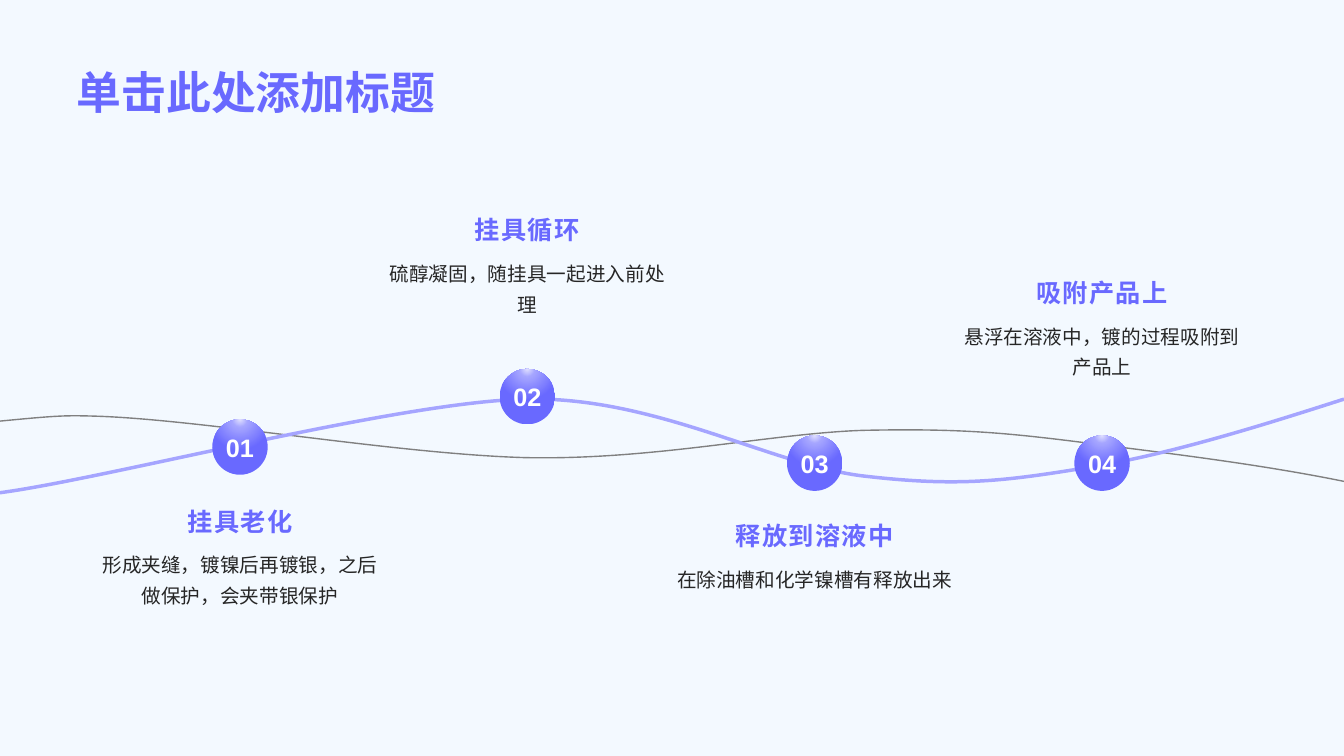
from dataclasses import dataclass

from lxml.etree import SubElement
from pptx import Presentation
from pptx.dml.color import RGBColor
from pptx.enum.shapes import MSO_SHAPE
from pptx.enum.text import MSO_ANCHOR, MSO_AUTO_SIZE, PP_ALIGN
from pptx.oxml.ns import qn
from pptx.slide import Slide
from pptx.util import Inches, Pt

COLORS = {
    "background": "F3F9FF",
    "accent": "6969FF",
    "accent_mid": "A5A5FF",
    "accent_light": "E1E1FF",
    "body": "262626",
    "thin_wave": "808080",
    "white": "FFFFFF",
}
FIRST_LEFT, STEP_PITCH = 0.97, 2.85
LABEL_WIDTH, HEADING_HEIGHT = 2.82, 0.42
BODY_OFFSET, BODY_HEIGHT = 0.46, 1.1
BADGE_SIZE = 0.55


@dataclass(frozen=True)
class Step:
    heading: str
    body: str
    heading_top: float
    badge_top: float


@dataclass(frozen=True)
class Wave:
    """Bezier curve: a start point, then three points for each segment."""
    points: tuple[tuple[float, float], ...]
    color: str
    weight: float


STEPS = (
    Step("挂具老化", "形成夹缝，镀镍后再镀银，之后做保护，会夹带银保护", 4.96, 4.16),
    Step("挂具循环", "硫醇凝固，随挂具一起进入前处理", 2.07, 3.66),
    Step("释放到溶液中", "在除油槽和化学镍槽有释放出来", 5.1, 4.32),
    Step("吸附产品上", "悬浮在溶液中，镀的过程吸附到产品上", 2.69, 4.32),
)
WAVES = (
    Wave(((-0.02, 4.18), (0.6, 4.12), (0.65, 4.12), (0.98, 4.13),
          (2.05, 4.17), (3.91, 4.5), (5.19, 4.54),
          (6.47, 4.57), (7.64, 4.3), (8.56, 4.27),
          (9.49, 4.25), (9.95, 4.29), (10.74, 4.39),
          (11.52, 4.49), (12.47, 4.6), (13.35, 4.78)), "thin_wave", 1),
    Wave(((-0.01, 4.89), (1.06, 4.75), (3.93, 3.99), (5.21, 3.96),
          (6.49, 3.93), (7.62, 4.6), (8.54, 4.72),
          (9.46, 4.83), (9.92, 4.78), (10.72, 4.65),
          (11.52, 4.53), (12.43, 4.25), (13.33, 3.96)), "accent_mid", 2.5),
)


def rgb(name: str) -> RGBColor:
    return RGBColor.from_string(COLORS[name])


def write_text(shape, text: str, *, size: float, color: str, bold: bool = False,
               align=PP_ALIGN.CENTER, anchor=MSO_ANCHOR.MIDDLE, wrap: bool = True,
               line_spacing: float = 1.0, tracking: float = 0) -> None:
    frame = shape.text_frame
    frame.margin_left = frame.margin_top = frame.margin_right = frame.margin_bottom = 0
    frame.auto_size = MSO_AUTO_SIZE.NONE
    frame.word_wrap = wrap
    frame.vertical_anchor = anchor
    paragraph = frame.paragraphs[0]
    paragraph.alignment = align
    paragraph.line_spacing = line_spacing
    run = paragraph.add_run()
    run.text = text
    run.font.name = "Arial"
    run.font.size = Pt(size)
    run.font.bold = bold
    run.font.color.rgb = rgb(color)
    if tracking:
        run.font._element.set("spc", str(round(tracking * 100)))


def draw_wave(slide: Slide, wave: Wave) -> None:
    points = [(Inches(x), Inches(y)) for x, y in wave.points]
    builder = slide.shapes.build_freeform(*points[0])
    builder.add_line_segments(points[1:], close=False)
    curve = builder.convert_to_shape()
    curve.shadow.inherit = False
    curve.fill.background()
    curve.line.color.rgb = rgb(wave.color)
    curve.line.width = Pt(wave.weight)
    # Join every three straight segments into one Bezier segment
    segments = list(curve._element.iter(qn("a:lnTo")))
    outline = segments[0].getparent()
    for start in range(0, len(segments), 3):
        bezier = SubElement(outline, qn("a:cubicBezTo"))
        for segment in segments[start:start + 3]:
            bezier.append(segment[0])
            outline.remove(segment)


def fill_glossy(shape) -> None:
    """Fill with a circular gradient lit from above."""
    shape.fill.gradient()
    gradient = shape._element.spPr.find(qn("a:gradFill"))
    for child in list(gradient):
        gradient.remove(child)
    stops = SubElement(gradient, qn("a:gsLst"))
    for percent, name in ((0, "accent_light"), (21, "accent_mid"), (80, "accent")):
        stop = SubElement(stops, qn("a:gs"), pos=str(percent * 1000))
        SubElement(stop, qn("a:srgbClr"), val=COLORS[name])
    circle = SubElement(gradient, qn("a:path"), {"path": "circle"})
    SubElement(circle, qn("a:fillToRect"), l="50000", t="-80000", r="50000", b="180000")


def draw_step(slide: Slide, index: int, step: Step) -> None:
    left = FIRST_LEFT + index * STEP_PITCH
    # Description
    body = slide.shapes.add_textbox(
        Inches(left), Inches(step.heading_top + BODY_OFFSET),
        Inches(LABEL_WIDTH), Inches(BODY_HEIGHT))
    write_text(body, step.body, size=14, color="body", anchor=MSO_ANCHOR.TOP,
               line_spacing=1.3)
    # Heading
    heading = slide.shapes.add_shape(
        MSO_SHAPE.ROUNDED_RECTANGLE, Inches(left), Inches(step.heading_top),
        Inches(LABEL_WIDTH), Inches(HEADING_HEIGHT))
    heading.adjustments[0] = 0.5
    heading.shadow.inherit = False
    heading.fill.background()
    heading.line.fill.background()
    write_text(heading, step.heading, size=18, color="accent", bold=True, tracking=1)
    # Numbered badge, centred on the label
    badge = slide.shapes.add_shape(
        MSO_SHAPE.OVAL, Inches(left + (LABEL_WIDTH - BADGE_SIZE) / 2),
        Inches(step.badge_top), Inches(BADGE_SIZE), Inches(BADGE_SIZE))
    badge.shadow.inherit = False
    badge.line.fill.background()
    fill_glossy(badge)
    write_text(badge, f"{index + 1:02}", size=18, color="white", bold=True, wrap=False)


def main() -> None:
    deck = Presentation()
    deck.slide_width, deck.slide_height = Inches(13.33), Inches(7.5)
    slide = deck.slides.add_slide(deck.slide_layouts[5])
    slide.background.fill.solid()
    slide.background.fill.fore_color.rgb = rgb("background")

    # Title
    title = slide.shapes.title
    title.left, title.top = Inches(0.76), Inches(0.39)
    title.width, title.height = Inches(11.81), Inches(0.79)
    write_text(title, "单击此处添加标题", size=32, color="accent", bold=True,
               align=PP_ALIGN.LEFT, anchor=MSO_ANCHOR.BOTTOM)

    # Waves and the steps along them
    for wave in WAVES:
        draw_wave(slide, wave)
    for index, step in enumerate(STEPS):
        draw_step(slide, index, step)

    deck.save("out.pptx")


if __name__ == "__main__":
    main()
